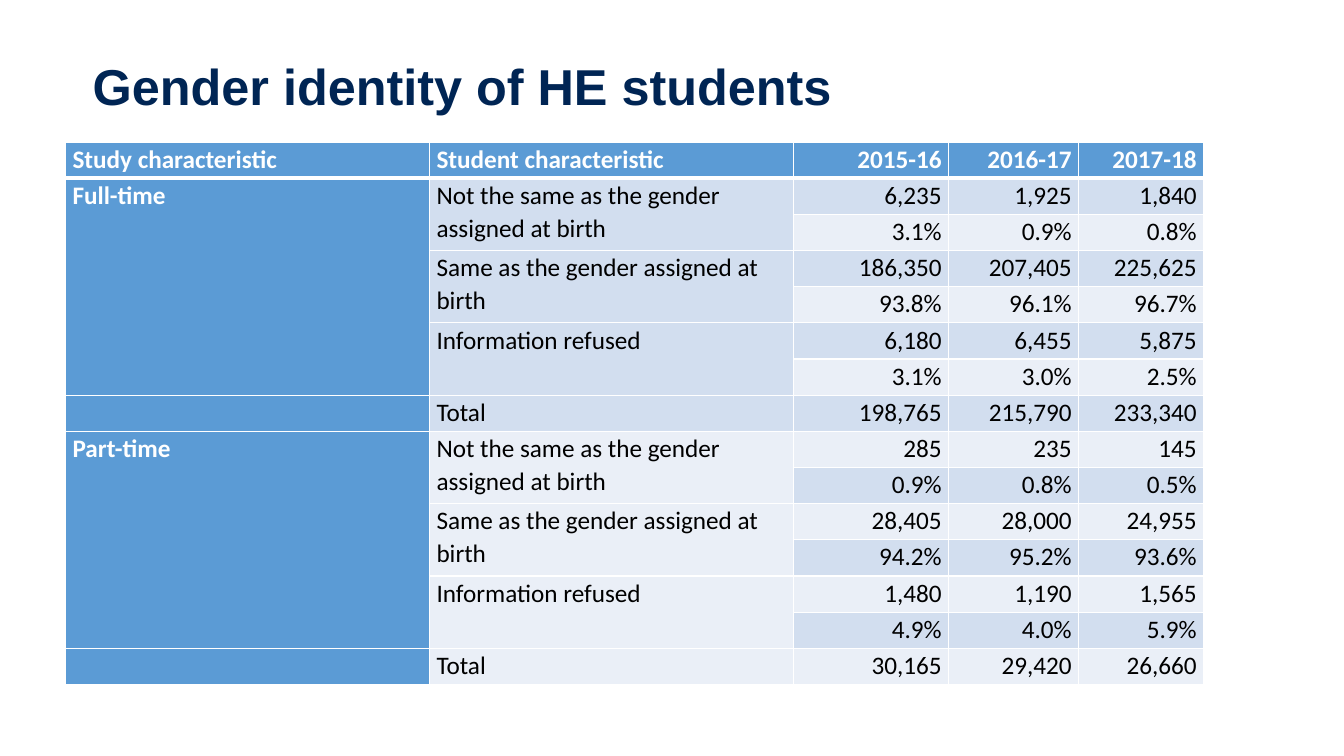
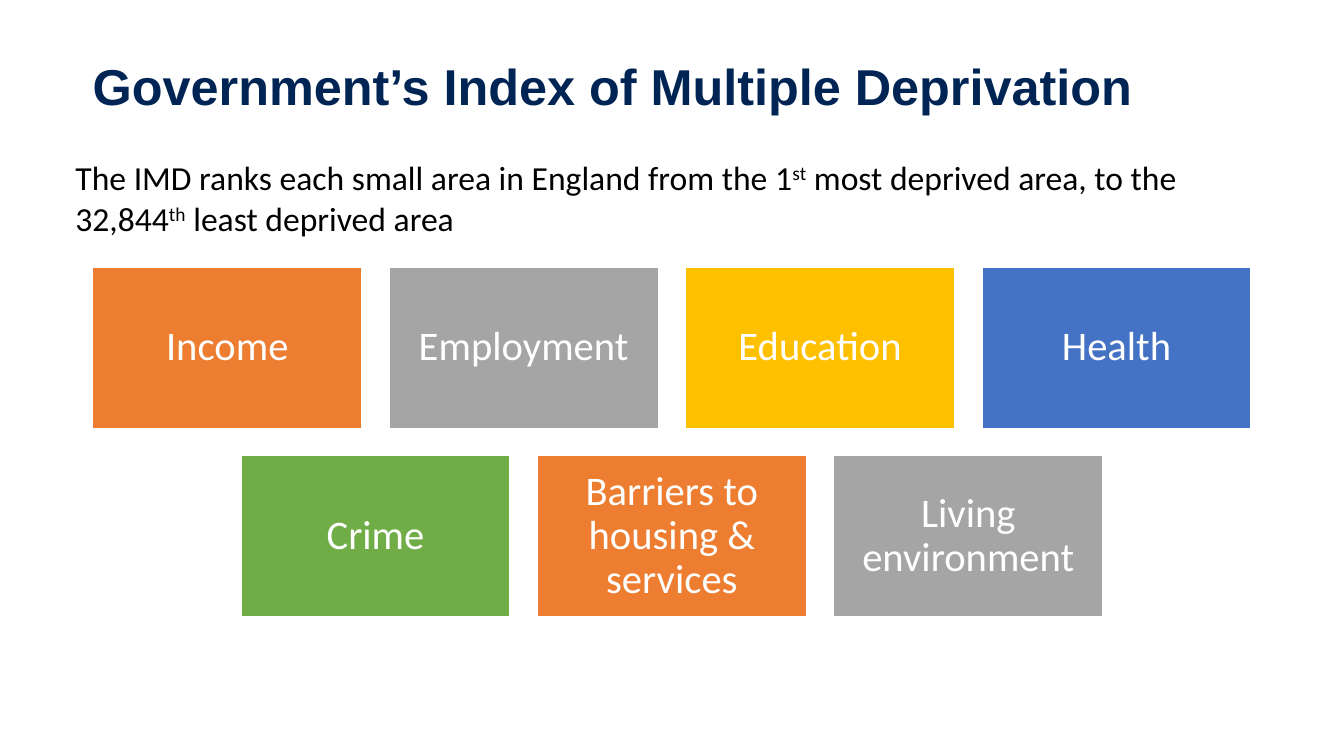
from lxml import etree
from pptx import Presentation
from pptx import util as u
from pptx.dml import color
from pptx.enum import shapes, text
from pptx.oxml import ns

NAVY, BLUE, WHITE, BLACK = "002554", "5B9BD5", "FFFFFF", "000000"
BANDS = ["EAEFF7", "D2DEEF"]
LEFT = 0.92


def hue(code):
    return color.RGBColor.from_string(code)


def write(frame, words, size=18, font="Calibri", ink=BLACK, bold=False,
          align="LEFT", anchor="TOP", space=1.0, pad=(0, 0)):
    frame.word_wrap = True
    frame.vertical_anchor = getattr(text.MSO_ANCHOR, anchor)
    frame.margin_left = frame.margin_right = u.Inches(pad[0])
    frame.margin_top = frame.margin_bottom = u.Inches(pad[1])
    para = frame.paragraphs[0]
    para.alignment = getattr(text.PP_ALIGN, align)
    para.line_spacing = space
    for n, part in enumerate(words.split("^")):
        run = para.add_run()
        run.text = part
        run.font.size = u.Pt(size)
        run.font.name = font
        run.font.bold = bold
        run.font.color.rgb = hue(ink)
        if n % 2:
            run.font._element.set("baseline", "30000")


deck = Presentation()
deck.slide_width, deck.slide_height = u.Inches(13.33), u.Inches(7.5)

pages = []
for head in ["Gender identity of HE students",
             "Government’s Index of Multiple Deprivation"]:
    page = deck.slides.add_slide(deck.slide_layouts[6])
    box = page.shapes.add_textbox(*map(u.Inches, (LEFT, 0.61, 11.5, 1.45)))
    write(box.text_frame, head, size=36, font="Arial", ink=NAVY, bold=True,
          space=0.9)
    pages.append(page)

same, other = ("Same as the gender assigned at birth",
               "Not the same as the gender assigned at birth")
refused = "Information refused"
rows = [
    ["Study characteristic", "Student characteristic",
     "2015-16", "2016-17", "2017-18"],
    ["Full-time", other, "6,235", "1,925", "1,840"],
    ["", "", "3.1%", "0.9%", "0.8%"],
    ["", same, "186,350", "207,405", "225,625"],
    ["", "", "93.8%", "96.1%", "96.7%"],
    ["", refused, "6,180", "6,455", "5,875"],
    ["", "", "3.1%", "3.0%", "2.5%"],
    ["", "Total", "198,765", "215,790", "233,340"],
    ["Part-time", other, "285", "235", "145"],
    ["", "", "0.9%", "0.8%", "0.5%"],
    ["", same, "28,405", "28,000", "24,955"],
    ["", "", "94.2%", "95.2%", "93.6%"],
    ["", refused, "1,480", "1,190", "1,565"],
    ["", "", "4.9%", "4.0%", "5.9%"],
    ["", "Total", "30,165", "29,420", "26,660"],
]
wide = [3.61, 3.61, 1.54, 1.29, 1.24]
deep = 5.38
grid = pages[0].shapes.add_table(
    len(rows), len(wide),
    *map(u.Inches, (0.65, 1.41, sum(wide), deep))).table
for col, width in zip(grid.columns, wide):
    col.width = u.Inches(width)
for r, row in enumerate(rows):
    grid.rows[r].height = u.Inches(deep / len(rows))
    for c, words in enumerate(row):
        cell = grid.cell(r, c)
        lead = r == 0 or c == 0
        props = cell._tc.get_or_add_tcPr()
        for side in "LRTB":
            thick = 3 if (r, side) in [(0, "B"), (1, "T")] else 1
            line = etree.SubElement(props, ns.qn("a:ln" + side),
                                    w=str(u.Pt(thick)))
            solid = etree.SubElement(line, ns.qn("a:solidFill"))
            etree.SubElement(solid, ns.qn("a:srgbClr"), val=WHITE)
        cell.fill.solid()
        cell.fill.fore_color.rgb = hue(BLUE if lead else BANDS[r % 2])
        cell.margin_left = cell.margin_right = u.Inches(0.07)
        cell.margin_top = cell.margin_bottom = 0
        if words:
            write(cell.text_frame, words, ink=WHITE if lead else BLACK,
                  bold=lead, align="RIGHT" if c > 1 else "LEFT",
                  space=1.07, pad=(0.07, 0))
for top in (1, 8):
    grid.cell(top, 0).merge(grid.cell(top + 5, 0))
    for r in range(top, top + 6, 2):
        grid.cell(r, 1).merge(grid.cell(r + 1, 1))

cards = [
    [("Income", "ED7D31"), ("Employment", "A5A5A5"),
     ("Education", "FFC000"), ("Health", "4472C4")],
    [("Crime", "70AD47"), ("Barriers to housing & services", "ED7D31"),
     ("Living environment", "A5A5A5")],
]
cw, ch, gap = 2.67, 1.6, 0.27
for r, row in enumerate(cards):
    shift = (len(cards[0]) - len(row)) / 2
    for c, (words, tint) in enumerate(row):
        card = pages[1].shapes.add_shape(
            shapes.MSO_SHAPE.RECTANGLE,
            *map(u.Inches, (LEFT + (c + shift) * (cw + gap),
                            2.65 + r * (ch + gap), cw, ch)))
        card.shadow.inherit = False
        card.fill.solid()
        card.fill.fore_color.rgb = hue(tint)
        card.line.color.rgb = hue(WHITE)
        card.line.width = u.Pt(1)
        write(card.text_frame, words, size=29, ink=WHITE, align="CENTER",
              anchor="MIDDLE", space=0.9, pad=(0.12, 0.12))

note = pages[1].shapes.add_textbox(*map(u.Inches, (0.65, 1.51, 11.76, 0.91)))
write(note.text_frame,
      "The IMD ranks each small area in England from the 1^st^ most deprived "
      "area, to the 32,844^th^ least deprived area", size=24, pad=(0.1, 0.05))

deck.save("out.pptx")
